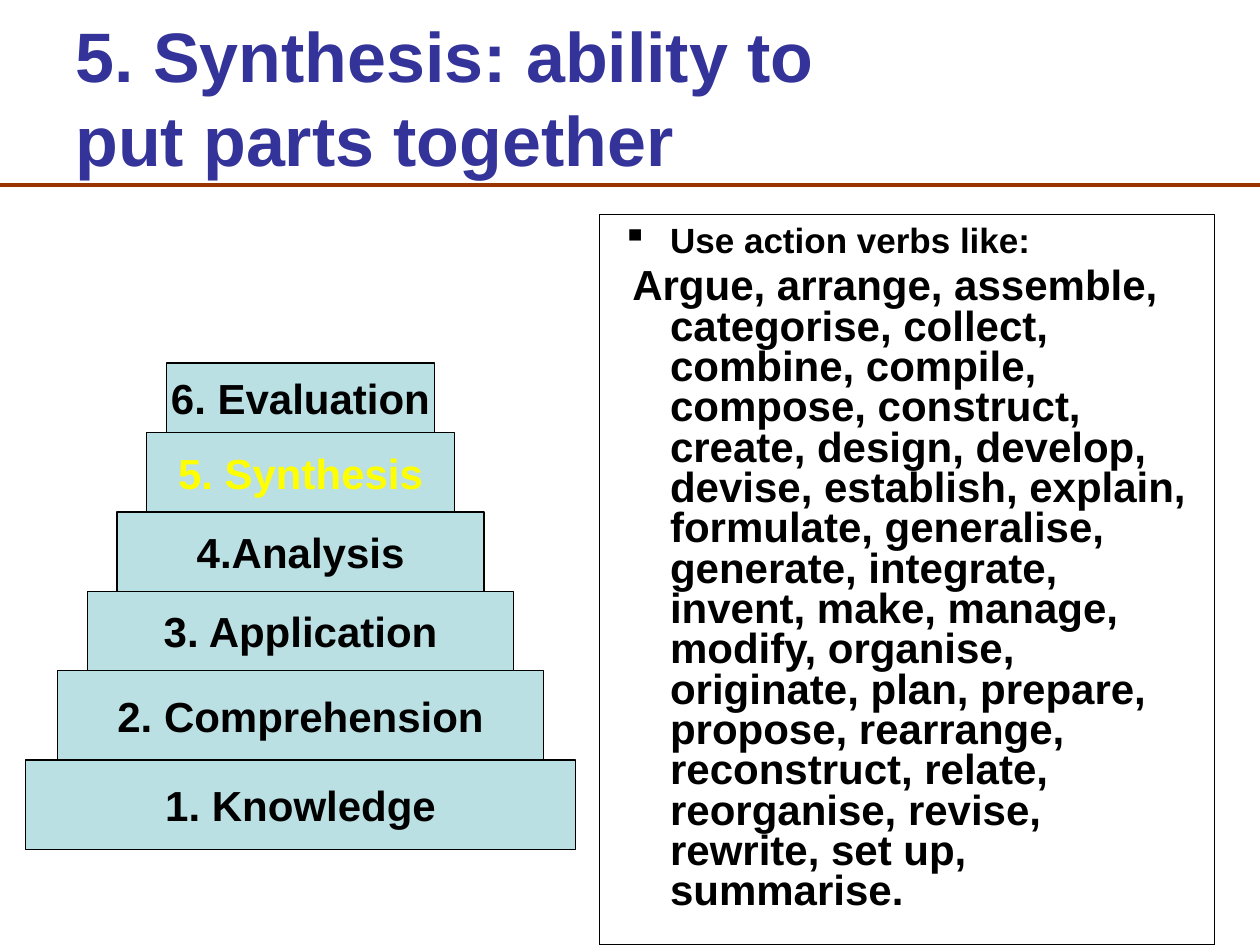
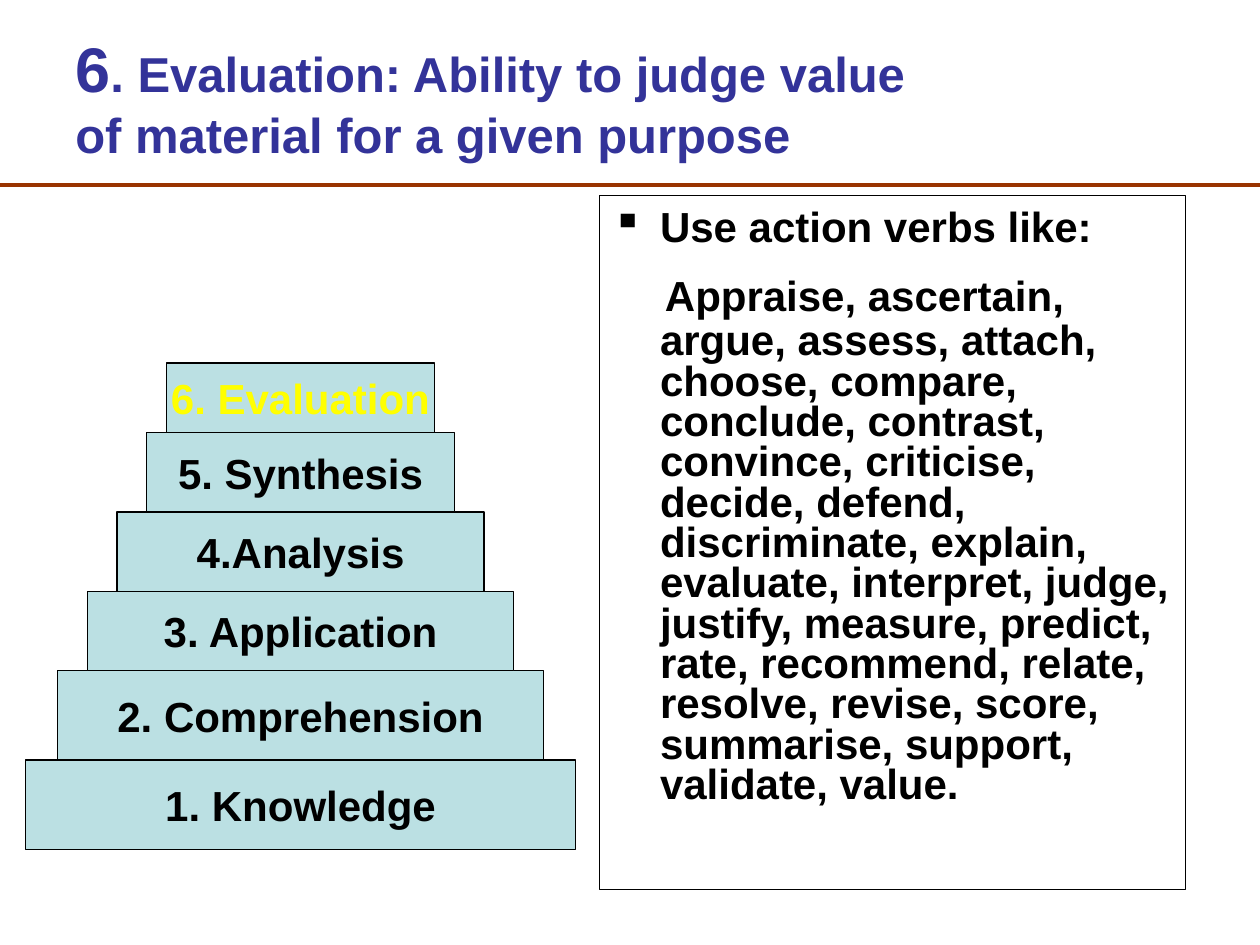
import pptx
import pptx.util
import pptx.dml.color
import pptx.enum.shapes
import pptx.enum.text
import pptx.oxml.ns
from dataclasses import dataclass
from lxml import etree


@dataclass(frozen=True)
class Theme:
    font: str = "Arial"
    heading: str = "333399"
    ink: str = "000000"
    highlight: str = "FFFF00"
    step: str = "BBE0E3"
    rule: str = "993300"
    title_size: int = 40
    number_size: int = 36
    long_title_size: int = 28
    body_size: int = 24
    small_size: int = 20
    hairline: float = 0.75
    rule_width: float = 2.25


theme = Theme()
rgb = pptx.dml.color.RGBColor.from_string
Pt = pptx.util.Pt

deck = pptx.Presentation()
deck.slide_width = pptx.util.Inches(10)
deck.slide_height = pptx.util.Inches(7.5)
COL = deck.slide_width / 100    # page grid: 100 columns by 100 rows
ROW = deck.slide_height / 100
MODULE = deck.slide_width / 127  # square module of the pyramid
HANG = 3.8 * COL                # hanging indent of the verb lists

# Pyramid from the base up: label, width and height in modules
steps = [
    ("1. Knowledge", 55.5, 9),
    ("2. Comprehension", 49, 9),
    ("3. Application", 43, 8),
    ("4.Analysis", 37, 8),
    ("5. Synthesis", 31, 8),
    ("6. Evaluation", 27, 7),
]
PYRAMID_CENTRE, PYRAMID_BASE = 30.3, 85.6

# Text parts are (text, size); boxes are left, top, width, height on the grid
lessons = [
    dict(
        title=[("5. Synthesis: ability to put parts together", theme.title_size)],
        current="5. Synthesis",
        frame=(47.6, 22.67, 48.8, 77.33),
        verbs_box=(48.4, 23.33, 47.3, 60.27),
        intro_size=theme.small_size,
        verbs_indent=-HANG,
        verbs=[(" Argue, arrange, assemble, categorise, collect, combine, "
                "compile, compose, construct, create, design, develop, devise, "
                "establish, explain, formulate, generalise, generate, integrate, "
                "invent, make, manage, modify, organise, originate, plan, "
                "prepare, propose, rearrange, reconstruct, relate, reorganise, "
                "revise, rewrite, set up, summarise.", theme.body_size)],
    ),
    dict(
        title=[("6", theme.number_size),
               (". Evaluation: Ability to judge value of material for a given "
                "purpose", theme.long_title_size)],
        current="6. Evaluation",
        frame=(47.6, 20.67, 46.5, 73.47),
        verbs_box=(47.6, 21.6, 46.5, 71.33),
        intro_size=theme.body_size,
        verbs_indent=-COL,
        verbs=[(" ", theme.number_size),
               ("Appraise, ascertain, argue, assess, attach, choose, compare, "
                "conclude, contrast, convince, criticise, decide, defend, "
                "discriminate, explain, evaluate, interpret, judge, justify, "
                "measure, predict, rate, recommend, relate, resolve, revise, "
                "score, summarise, support, validate, value.", theme.body_size)],
    ),
]


def write(paragraph, parts, color):
    for text, size in parts:
        run = paragraph.add_run()
        run.text = text
        run.font.name = theme.font
        run.font.size = Pt(size)
        run.font.bold = True
        run.font.color.rgb = rgb(color)


def add_box(slide, left, top, width, height, fill=None):
    box = slide.shapes.add_shape(pptx.enum.shapes.MSO_SHAPE.RECTANGLE,
                                 round(left), round(top), round(width), round(height))
    box.shadow.inherit = False
    box.line.color.rgb = rgb(theme.ink)
    box.line.width = Pt(theme.hairline)
    if fill:
        box.fill.solid()
        box.fill.fore_color.rgb = rgb(fill)
    else:
        box.fill.background()
    return box


for lesson in lessons:
    slide = deck.slides.add_slide(deck.slide_layouts[6])

    # Rule under the title
    rule_y = round(19.6 * ROW)
    rule = slide.shapes.add_connector(pptx.enum.shapes.MSO_CONNECTOR.STRAIGHT,
                                      0, rule_y, deck.slide_width, rule_y)
    rule.line.color.rgb = rgb(theme.rule)
    rule.line.width = Pt(theme.rule_width)
    etree.SubElement(rule._element.spPr, pptx.oxml.ns.qn("a:effectLst"))

    # Title
    title = slide.shapes.add_textbox(round(5 * COL), round(1.73 * ROW),
                                     round(68.6 * COL), round(16.93 * ROW)).text_frame
    title.word_wrap = True
    title.vertical_anchor = pptx.enum.text.MSO_ANCHOR.MIDDLE
    write(title.paragraphs[0], lesson["title"], theme.heading)

    # Action verbs
    left, top, width, height = lesson["verbs_box"]
    verbs = slide.shapes.add_textbox(round(left * COL), round(top * ROW),
                                     round(width * COL), round(height * ROW)).text_frame
    verbs.word_wrap = True
    intro, verb_list = verbs.paragraphs[0], verbs.add_paragraph()
    for paragraph, indent in ((intro, -HANG), (verb_list, lesson["verbs_indent"])):
        properties = paragraph._p.get_or_add_pPr()
        properties.set("marL", str(round(HANG)))
        properties.set("indent", str(round(indent)))
        paragraph.line_spacing = 0.8
    bullet = etree.SubElement(intro._p.pPr, pptx.oxml.ns.qn("a:buChar"))
    bullet.set("char", "▪")
    verb_list.space_before = Pt(0.2 * lesson["verbs"][0][1])
    write(intro, [("Use action verbs like:", lesson["intro_size"])], theme.ink)
    write(verb_list, lesson["verbs"], theme.ink)

    # Frame around the verbs
    left, top, width, height = lesson["frame"]
    add_box(slide, left * COL, top * ROW, width * COL, height * ROW)

    # Pyramid, each step standing on the one below
    step_top = PYRAMID_BASE
    for label, width, height in steps:
        step_top -= height
        step = add_box(slide, (PYRAMID_CENTRE - width / 2) * MODULE, step_top * MODULE,
                       width * MODULE, height * MODULE, theme.step).text_frame
        step.word_wrap = False
        step.vertical_anchor = pptx.enum.text.MSO_ANCHOR.MIDDLE
        step.paragraphs[0].alignment = pptx.enum.text.PP_ALIGN.CENTER
        color = theme.highlight if label == lesson["current"] else theme.ink
        write(step.paragraphs[0], [(label, theme.body_size)], color)

deck.save("out.pptx")
